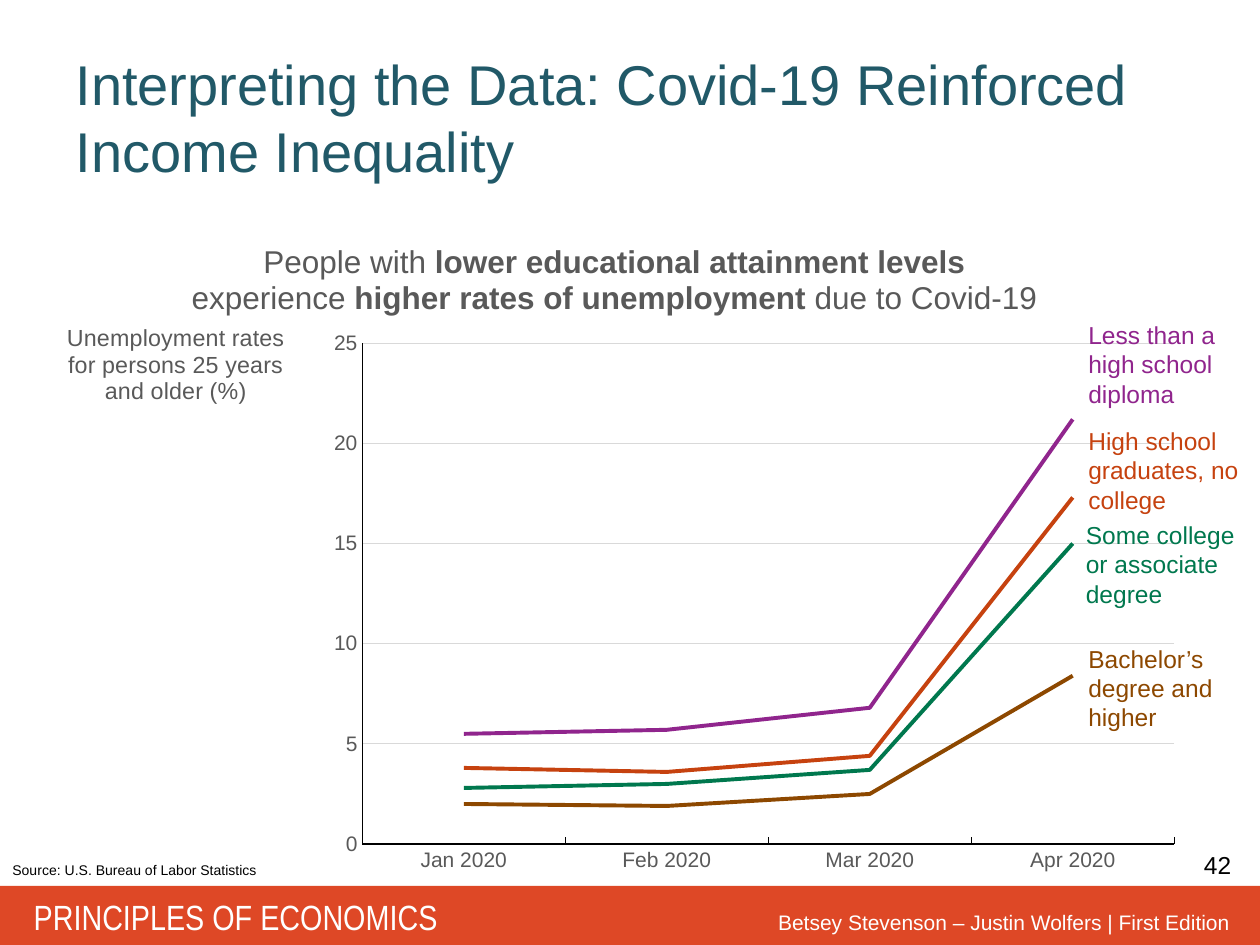
"""Build the slide on unemployment by educational attainment during Covid-19."""
import pptx
import pptx.chart.data
import pptx.dml.color
import pptx.enum.chart
import pptx.enum.shapes
import pptx.enum.text
import pptx.oxml
import pptx.oxml.ns
import pptx.util

Cm = pptx.util.Cm
Pt = pptx.util.Pt
RGBColor = pptx.dml.color.RGBColor
Align = pptx.enum.text.PP_ALIGN
Tick = pptx.enum.chart.XL_TICK_MARK

TEAL = RGBColor(0x21, 0x59, 0x68)
RED = RGBColor(0xDE, 0x48, 0x26)
WHITE = RGBColor(0xFF, 0xFF, 0xFF)
BLACK = RGBColor(0, 0, 0)
GREY = RGBColor(0x59, 0x59, 0x59)
GRID = RGBColor(0xD9, 0xD9, 0xD9)
PURPLE = RGBColor(0x90, 0x25, 0x8D)
ORANGE = RGBColor(0xC6, 0x42, 0x0F)
GREEN = RGBColor(0x00, 0x78, 0x4E)
BROWN = RGBColor(0x8D, 0x48, 0x00)

TITLE = "Interpreting the Data: Covid-19 Reinforced Income Inequality"
CHART_TITLE = [
    [("People with ", False), ("lower educational attainment levels", True)],
    [("experience ", False), ("higher rates of unemployment", True),
     (" due to Covid-19", False)],
]
AXIS_TITLE = [[("Unemployment rates", False)], [("for persons 25 years", False)],
              [("and older (%)", False)]]
MONTHS = ["Jan 2020", "Feb 2020", "Mar 2020", "Apr 2020"]
GROUPS = [
    ("Less than a high school diploma", PURPLE, (5.5, 5.7, 6.8, 21.2), (21.69, 6.32, 3.99, 2.06)),
    ("High school graduates, no college", ORANGE, (3.8, 3.6, 4.4, 17.3), (21.69, 8.46, 3.89, 2.06)),
    ("Some college or associate degree", GREEN, (2.8, 3, 3.7, 15), (21.64, 10.36, 4.01, 2.06)),
    ("Bachelor’s degree and higher", BROWN, (2, 1.9, 2.5, 8.4), (21.69, 12.85, 4.01, 2.06)),
]
FOOTER_TEXTS = [
    ("Betsey Stevenson – Justin Wolfers | First Edition", (14.81, 18.21, 10.24, 0.76),
     Align.RIGHT, {"size": Pt(12), "name": "Arial", "color": WHITE}),
    ("PRINCIPLES OF ECONOMICS", (0.43, 17.93, 9.37, 1.12),
     Align.LEFT, {"size": Pt(20), "name": "Arial Narrow", "color": WHITE}),
    ("42", (22.76, 17.02, 2.31, 0.86),
     Align.RIGHT, {"size": Pt(14), "name": "Arial", "color": BLACK}),
    ("Source: U.S. Bureau of Labor Statistics", (0, 17.25, 7.32, 0.61),
     Align.LEFT, {"size": Pt(8), "name": "Arial", "color": BLACK}),
]


def box(values):
    return [Cm(value) for value in values]


def format_font(font, settings):
    for name, value in settings.items():
        if name == "color":
            font.color.rgb = value
        else:
            setattr(font, name, value)


def format_line(line, color, width):
    line.color.rgb = color
    line.width = Pt(width)


def add_text(slide, text, place, alignment, settings):
    frame = slide.shapes.add_textbox(*box(place)).text_frame
    frame.word_wrap = True
    paragraph = frame.paragraphs[0]
    paragraph.text = text
    paragraph.alignment = alignment
    format_font(paragraph.font, settings)


def make_layout(values, target=""):
    modes = "".join(f'<c:{axis}Mode val="edge"/>' for axis in "xy")
    sizes = "".join(f'<c:{name} val="{value}"/>' for name, value in zip("xywh", values))
    return pptx.oxml.parse_xml(
        f'<c:layout {pptx.oxml.ns.nsdecls("c")}><c:manualLayout>'
        f'{target}{modes}{sizes}</c:manualLayout></c:layout>')


def fill_chart_title(title, lines, size, position):
    frame = title.text_frame
    for index, runs in enumerate(lines):
        paragraph = frame.add_paragraph() if index else frame.paragraphs[0]
        paragraph.alignment = Align.CENTER
        for text, bold in runs:
            run = paragraph.add_run()
            run.text = text
            format_font(run.font, {"size": Pt(size), "name": "Arial", "bold": bold, "color": GREY})
    body = frame._txBody.find(pptx.oxml.ns.qn("a:bodyPr"))
    body.set("rot", "0")
    body.set("vert", "horz")
    element = title._element
    for old in element.findall(pptx.oxml.ns.qn("c:layout")):
        element.remove(old)
    element.find(pptx.oxml.ns.qn("c:tx")).addnext(make_layout(position))


def add_rates_chart(slide):
    data = pptx.chart.data.CategoryChartData()
    data.categories = MONTHS
    for number, (_, _, rates, _) in enumerate(GROUPS, 1):
        data.add_series(f"Series {number}", rates)
    chart = slide.shapes.add_chart(pptx.enum.chart.XL_CHART_TYPE.LINE,
                                   *box((1.27, 4.27, 22.86, 13.59)), data).chart
    chart.has_legend = False
    chart.font.name = "Arial"
    chart.font.size = Pt(10)
    chart.plots[0].vary_by_categories = False
    for series, (_, color, _, _) in zip(chart.plots[0].series, GROUPS):
        series.smooth = False
        series.marker.style = pptx.enum.chart.XL_MARKER_STYLE.NONE
        format_line(series.format.line, color, 2.25)

    months, rates = chart.category_axis, chart.value_axis
    for axis, tick in ((months, Tick.INSIDE), (rates, Tick.NONE)):
        axis.major_tick_mark = tick
        axis.minor_tick_mark = Tick.NONE
        format_font(axis.tick_labels.font, {"size": Pt(12), "name": "Arial", "color": GREY})
        format_line(axis.format.line, BLACK, 0.75)
    months.has_major_gridlines = False
    rates.minimum_scale, rates.maximum_scale, rates.major_unit = 0, 25, 5
    format_line(rates.major_gridlines.format.line, GRID, 0.75)

    fill_chart_title(chart.chart_title, CHART_TITLE, 18, (0.11, 0.04))
    fill_chart_title(rates.axis_title, AXIS_TITLE, 13.3, (0.0, 0.16))
    plot_area = chart._chartSpace.chart.plotArea
    for old in plot_area.findall(pptx.oxml.ns.qn("c:layout")):
        plot_area.remove(old)
    plot_area.insert(0, make_layout((0.264, 0.195, 0.716, 0.743),
                                    '<c:layoutTarget val="inner"/>'))


def main():
    presentation = pptx.Presentation()
    presentation.slide_width, presentation.slide_height = Cm(25.4), Cm(19.05)
    slide = presentation.slides.add_slide(presentation.slide_layouts[5])

    bar = slide.shapes.add_shape(pptx.enum.shapes.MSO_SHAPE.RECTANGLE,
                                 *box((0, 17.86, 25.4, 1.19)))
    bar.shadow.inherit = False
    bar.fill.solid()
    bar.fill.fore_color.rgb = RED
    bar.line.fill.background()

    title = slide.shapes.title
    title.left, title.top, title.width, title.height = box((1.27, 0.76, 22.86, 3.18))
    title.text_frame.text = TITLE
    title.text_frame.vertical_anchor = pptx.enum.text.MSO_ANCHOR.MIDDLE
    paragraph = title.text_frame.paragraphs[0]
    paragraph.alignment = Align.LEFT
    format_font(paragraph.font, {"size": Pt(32), "name": "Arial", "color": TEAL})

    add_rates_chart(slide)
    for label, color, _, place in GROUPS:
        add_text(slide, label, place, Align.LEFT,
                 {"size": Pt(14), "name": "Arial", "color": color})
    for footer in FOOTER_TEXTS:
        add_text(slide, *footer)
    presentation.save("out.pptx")


if __name__ == "__main__":
    main()
